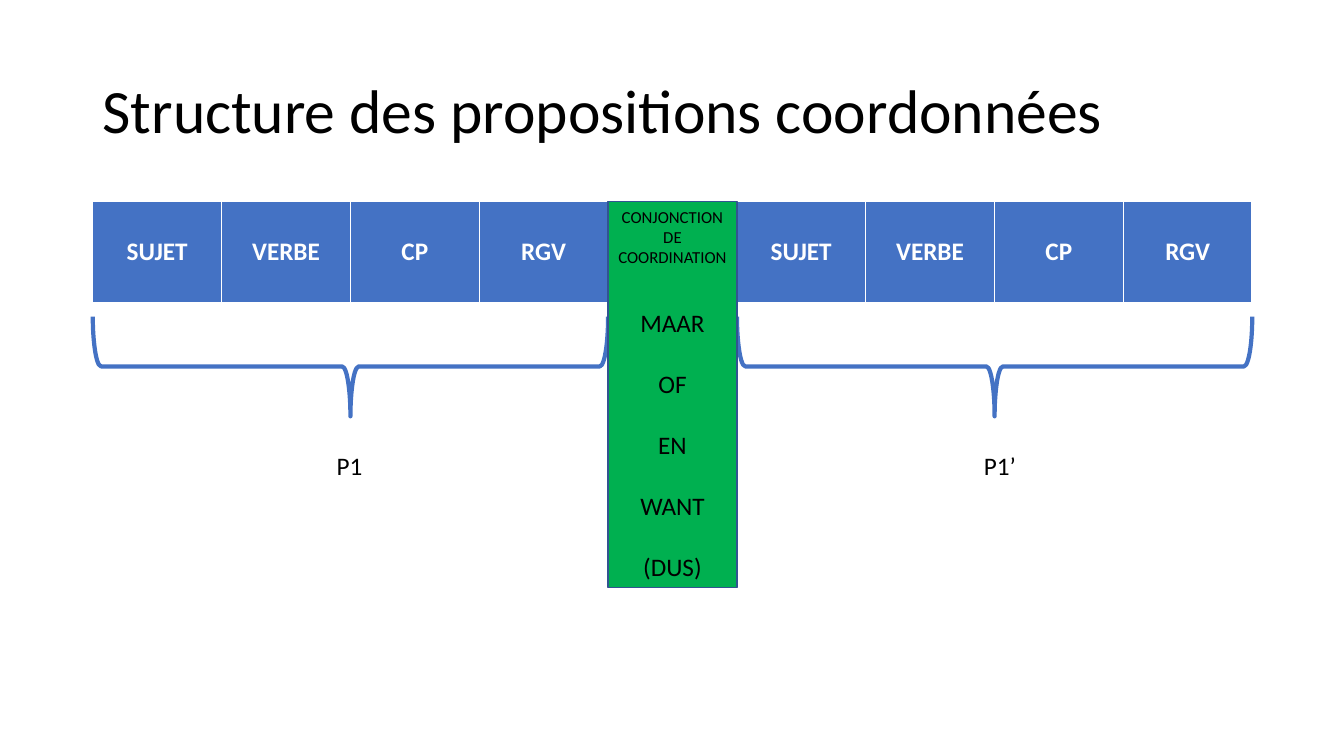
import pptx
import pptx.util
import pptx.dml.color
import pptx.enum.shapes
import pptx.enum.text

Inches = pptx.util.Inches
Pt = pptx.util.Pt
Shape = pptx.enum.shapes.MSO_SHAPE
Align = pptx.enum.text.PP_ALIGN
Anchor = pptx.enum.text.MSO_ANCHOR


class Board:
    """Holds the style and the current slide, and draws its elements."""

    font = "Calibri"
    colors = {"blue": "4472C4", "green": "00B050", "edge": "325491",
              "black": "000000", "white": "FFFFFF"}

    def __init__(self, slide):
        self.slide = slide

    def color(self, name):
        return pptx.dml.color.RGBColor.from_string(self.colors[name])

    def style(self, para, size, color="black", bold=False, align=Align.LEFT):
        para.alignment = align
        for run in para.runs:
            run.font.name = self.font
            run.font.size = Pt(size)
            run.font.bold = bold
            run.font.color.rgb = self.color(color)

    def text(self, words, left, top, width, height, size=18):
        box = self.slide.shapes.add_textbox(
            Inches(left), Inches(top), Inches(width), Inches(height))
        frame = box.text_frame
        frame.word_wrap = True
        frame.vertical_anchor = Anchor.MIDDLE
        frame.text = words
        self.style(frame.paragraphs[0], size)
        return frame

    def table(self, heads, left, top, width, height):
        grid = self.slide.shapes.add_table(
            1, len(heads), Inches(left), Inches(top), Inches(width), Inches(height)).table
        for cell, head in zip(grid.rows[0].cells, heads):
            cell.fill.solid()
            cell.fill.fore_color.rgb = self.color("blue" if head else "green")
            cell.vertical_anchor = Anchor.MIDDLE
            cell.text_frame.text = head
            self.style(cell.text_frame.paragraphs[0], 18, "white", True, Align.CENTER)

    def brace(self, left, top, span, depth):
        shape = self.slide.shapes.add_shape(
            Shape.RIGHT_BRACE, Inches(left + (span - depth) / 2),
            Inches(top + (depth - span) / 2), Inches(depth), Inches(span))
        shape.rotation = 90
        shape.shadow.inherit = False
        shape.fill.background()
        shape.line.color.rgb = self.color("blue")
        shape.line.width = Pt(3)

    def panel(self, lines, left, top, width, height):
        shape = self.slide.shapes.add_shape(
            Shape.RECTANGLE, Inches(left), Inches(top), Inches(width), Inches(height))
        shape.shadow.inherit = False
        shape.fill.solid()
        shape.fill.fore_color.rgb = self.color("green")
        shape.line.color.rgb = self.color("edge")
        shape.line.width = Pt(1)
        frame = shape.text_frame
        frame.word_wrap = True
        frame.vertical_anchor = Anchor.TOP
        frame.margin_left = frame.margin_right = Inches(0.05)
        frame.text = "\n".join(words for words, size, gap in lines)
        for para, (words, size, gap) in zip(frame.paragraphs, lines):
            para.space_before = Pt(gap)
            self.style(para, size, align=Align.CENTER)


def main():
    deck = pptx.Presentation()
    deck.slide_width, deck.slide_height = Inches(13.33), Inches(7.5)
    board = Board(deck.slides.add_slide(deck.slide_layouts[6]))

    left, top, width = 0.92, 2, 11.5
    col = width / 9
    clause = ["SUJET", "VERBE", "CP", "RGV"]

    title = board.text("Structure des propositions coordonnées", left, 0.4, width, 1.45, 44)
    title.paragraphs[0].line_spacing = 0.9
    board.table(clause + [""] + clause, left, top, width, 1)
    for start in (0, 5):
        board.brace(left + start * col, 3.14, 4 * col, 0.99)
    board.text("P1", 3.24, 4.42, 1.95, 0.4)
    board.text("P1’", 9.66, 4.42, 1.23, 0.4)

    lines = [("CONJONCTION", 12, 0), ("DE COORDINATION", 12, 0), ("MAAR", 18, 29)]
    lines += [(word, 18, 22) for word in ("OF", "EN", "WANT", "(DUS)")]
    board.panel(lines, left + 4 * col, top, col, 3.83)
    deck.save("out.pptx")


if __name__ == "__main__":
    main()
